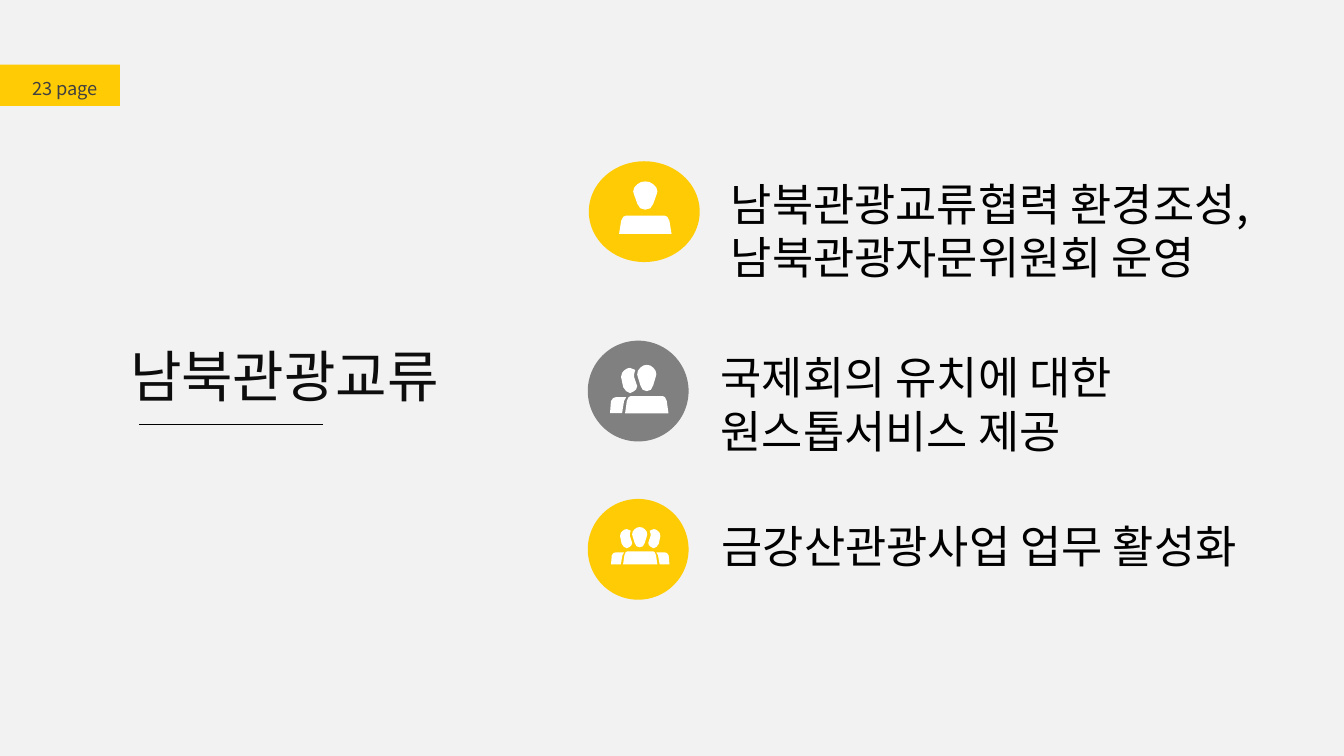
from pptx import Presentation
from pptx.dml.color import RGBColor
from pptx.enum.shapes import MSO_CONNECTOR, MSO_SHAPE
from pptx.enum.text import MSO_ANCHOR, MSO_AUTO_SIZE, PP_ALIGN
from pptx.oxml.ns import qn
from pptx.util import Inches, Pt
from lxml.etree import SubElement

COLORS = {
    "background": "F2F2F2", "yellow": "FFCB05", "gray": "808080",
    "white": "FFFFFF", "black": "000000", "title": "0D0D0D", "page": "404040",
}
FONT = "Noto Sans CJK KR"

# Outlines within a unit box; a negative box width mirrors them
HEAD = [(0, .36), (.04, .22), (.17, .1), (.33, .02), (.5, 0), (.67, .02),
        (.83, .1), (.96, .22), (1, .36), (.96, .48), (.83, .79), (.71, .95),
        (.5, 1), (.29, .95), (.17, .79), (.04, .48)]
BODY = [(0, 1), (.04, .28), (.08, .06), (.13, 0),
        (.87, 0), (.92, .06), (.96, .28), (1, 1)]
SIDE_HEAD = [(0, .36), (.06, .2), (.19, .1), (.38, .02), (.56, 0), (.88, .08),
             (.81, .24), (.81, .36), (1, .72), (.94, .84), (.81, .92),
             (.56, 1), (.31, .92), (.13, .76)]
SIDE_BODY = [(0, 1), (.06, .25), (.19, .06), (.37, 0),
             (1, 0), (.87, .25), (.75, 1)]


def paint(shape, color):
    shape.shadow.inherit = False
    shape.fill.solid()
    shape.fill.fore_color.rgb = RGBColor.from_string(COLORS[color])
    shape.line.fill.background()


def write(box, text, size, color, wrap=True):
    frame = box.text_frame
    settings = {"word_wrap": wrap, "auto_size": MSO_AUTO_SIZE.NONE,
                "vertical_anchor": MSO_ANCHOR.TOP}
    for name, value in settings.items():
        setattr(frame, name, value)
    para = frame.paragraphs[0]
    para.alignment = PP_ALIGN.LEFT
    span = para.add_run()
    span.text = text
    for name, value in {"name": FONT, "size": Pt(size)}.items():
        setattr(span.font, name, value)
    span.font.color.rgb = RGBColor.from_string(COLORS[color])
    SubElement(span.font._element, qn("a:ea")).set("typeface", FONT)
    return para


deck = Presentation()
deck.slide_width, deck.slide_height = Inches(13.33), Inches(7.5)
page = deck.slides.add_slide(deck.slide_layouts[5])
page.background.fill.solid()
page.background.fill.fore_color.rgb = RGBColor.from_string(COLORS["background"])

# Page tag
tag = page.shapes.add_shape(
    MSO_SHAPE.RECTANGLE, 0, Inches(0.64), Inches(1.19), Inches(0.41))
paint(tag, "yellow")
tag_box = page.shapes.add_textbox(
    Inches(0.22), Inches(0.61), Inches(0.97), Inches(0.39))
write(tag_box, "23 page", 13, "page").line_spacing = 1.5

# Title and underline
title = page.shapes.title
title_place = {"left": 1.19, "top": 3.34, "width": 3.62, "height": 0.77}
for name, value in title_place.items():
    setattr(title, name, Inches(value))
write(title, "남북관광교류", 40, "title")
underline = page.shapes.add_connector(
    MSO_CONNECTOR.STRAIGHT, Inches(1.38), Inches(4.21), Inches(3.2), Inches(4.21))
underline.line.color.rgb = RGBColor.from_string(COLORS["black"])
underline.line.width = Pt(0.5)
SubElement(underline._element.spPr, qn("a:effectLst"))

# Items: text, text box, wrap, badge, badge color, parts of the people icon
ITEMS = [
    ("남북관광교류협력 환경조성, 남북관광자문위원회 운영",
     (7.15, 1.7, 6.03, 1.18), True, (5.84, 1.6, 1.1, 1), "yellow",
     [(HEAD, 6.28, 1.8, .24, .28), (BODY, 6.14, 2.14, .52, .18)]),
    ("국제회의 유치에 대한 원스톱서비스 제공",
     (7.05, 3.42, 4.99, 1.18), True, (5.83, 3.38, 1, 1), "gray",
     [(SIDE_HEAD, 6.16, 3.65, .16, .25), (SIDE_BODY, 6.05, 3.94, .16, .16),
      (HEAD, 6.32, 3.62, .19, .26), (BODY, 6.2, 3.93, .43, .17)]),
    ("금강산관광사업 업무 활성화",
     (7.06, 5.1, 5.9, 0.64), False, (5.83, 4.95, 1, 1), "yellow",
     [(SIDE_HEAD, 6.15, 5.25, .12, .19), (SIDE_BODY, 6.06, 5.48, .13, .12),
      (HEAD, 6.27, 5.23, .15, .2), (BODY, 6.18, 5.47, .34, .13),
      (SIDE_HEAD, 6.55, 5.25, -.12, .19), (SIDE_BODY, 6.64, 5.48, -.13, .12)]),
]
for text, text_place, wrap, badge_place, color, parts in ITEMS:
    badge = page.shapes.add_shape(MSO_SHAPE.OVAL, *map(Inches, badge_place))
    paint(badge, color)

    # All people of one icon form a single outline
    builder = None
    for outline, left, top, width, height in parts:
        points = [(Inches(left + x * width), Inches(top + y * height))
                  for x, y in outline]
        if builder is None:
            builder = page.shapes.build_freeform(*points[0])
        else:
            builder.move_to(*points[0])
        builder.add_line_segments(points[1:], close=True)
    paint(builder.convert_to_shape(), "white")

    text_box = page.shapes.add_textbox(*map(Inches, text_place))
    write(text_box, text, 32, "black", wrap)

deck.save("out.pptx")
